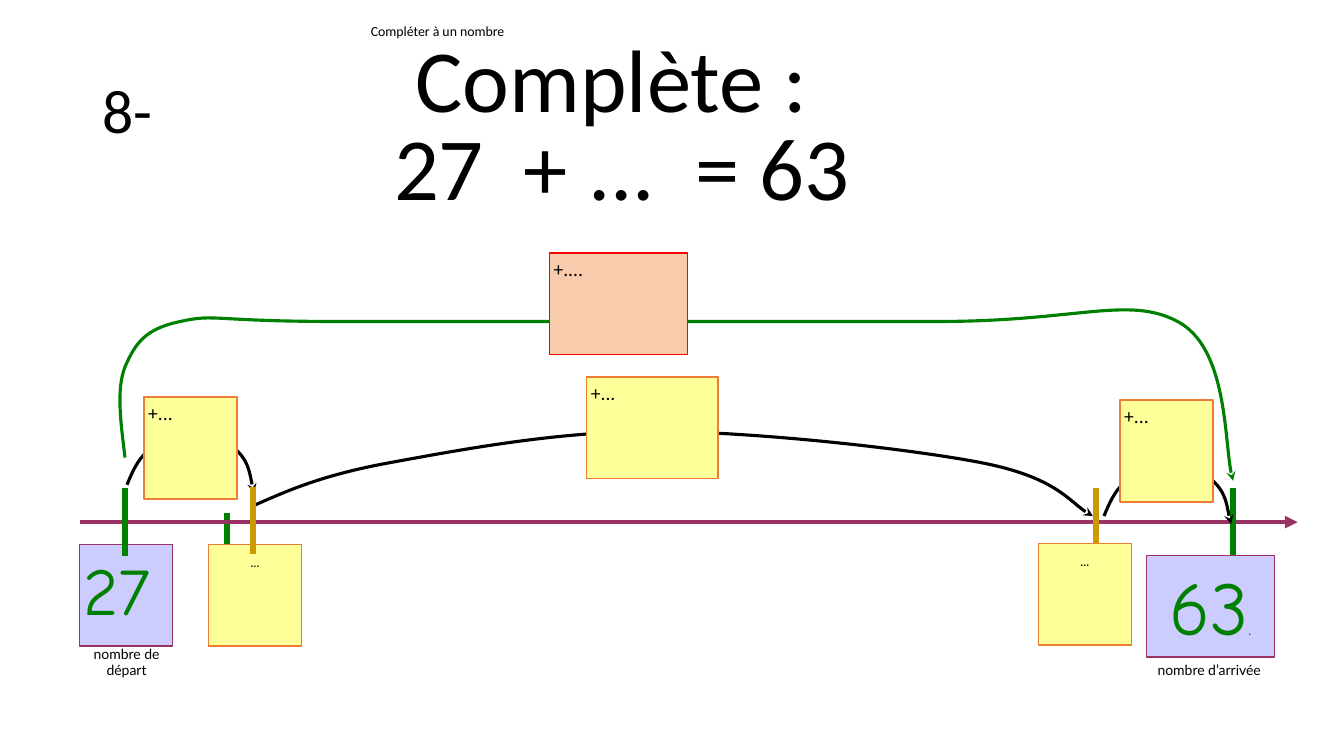
"""Build a number-line slide for completing 27 + ... = 63."""
from lxml import etree
from pptx import Presentation, util as u
from pptx.dml.color import RGBColor
from pptx.enum import shapes, text
from pptx.oxml.ns import qn

PX = 9144
BLACK, GREEN, PLUM, GOLD = "000000", "008000", "993366", "CC9900"
LILAC, YELLOW, ORANGE, PEACH, RED = "CCCCFF", "FFFF99", "ED7D31", "F8CBAD", "FF0000"
BOX_H, INSET, BOX_LINE = 101, 4, 1
LEFT, CENTER = text.PP_ALIGN.LEFT, text.PP_ALIGN.CENTER

NUMBER = [("8-", 44, LEFT)]
EXERCISE = [("Compléter à un nombre", 9.9, LEFT),
            ("Complète : ", 63.3, CENTER),
            ("27  + ...  = 63", 63.3, CENTER)]
LABELS = [((46, 636, 159, 107), [("nombre de", 10, CENTER), ("départ", 10, CENTER)]),
          ((1144, 652, 125, 124), [("nombre d’arrivée", 10, LEFT)])]

BACK_TICK = (225, 509, 225, 615, GREEN, 4.5)
AXIS = (79, 518, 1287, 518, PLUM, 3)
TICKS = [(x, 484, x, 552, color, 4.5)
         for x, color in ((124, GREEN), (1087, GOLD), (1223, GREEN))]
FRONT_TICK = (251, 483, 251, 550, GOLD, 4.5)

TOTAL_JUMP = [(124, 454), (120, 420), (115, 387), (124, 364), (134, 341), (144, 326),
              (179, 319), (214, 311), (210, 319), (335, 319), (460, 319), (791, 319),
              (930, 319), (1069, 319), (1119, 293), (1168, 319), (1217, 345),
              (1214, 450), (1223, 477)]
SMALL_JUMP = [(126, 481), (131, 469), (136, 457), (146, 448), (157, 438), (171, 423),
              (186, 423), (201, 423), (225, 436), (236, 448), (247, 459), (250, 482),
              (252, 489)]
BIG_JUMP = [(253, 501), (287, 486), (321, 471), (387, 459), (453, 447), (551, 428),
            (648, 428), (746, 428), (900, 445), (973, 459), (1045, 473), (1065, 503),
            (1084, 512)]
LAST_JUMP = [(x + 969, y + 31) for x, y in SMALL_JUMP]

START = (79, 540, 92, LILAC, PLUM, [("27", 48)], "Comic Neue", GREEN, LEFT)
END = (1137, 551, 127, LILAC, PLUM, [("63", 54), (".", 14)], "Comic Neue", GREEN, CENTER)
STEPS = [(x, y, 92, YELLOW, ORANGE, [("...", 14)], "Comic Neue", BLACK, CENTER)
         for x, y in ((207, 540), (1030, 539))]
GAPS = [(x, y, w, YELLOW, ORANGE, [("+...", 14)], "Calibri", BLACK, LEFT)
        for x, y, w in ((143, 394, 92), (582, 374, 130), (1111, 397, 92))]
TOTAL = (545, 251, 137, PEACH, RED, [("+....", 14)], "Calibri", BLACK, LEFT)


def rgb(color):
    return RGBColor.from_string(color)


def px(*values):
    return [v * PX for v in values]


def set_line(sp, color, width, head=None):
    sp.line.color.rgb = rgb(color)
    sp.line.width = u.Pt(width)
    if head:
        etree.SubElement(sp.line._get_or_add_ln(), qn("a:tailEnd"), type=head)


def set_margins(tf):
    tf.margin_left = tf.margin_right = tf.margin_top = tf.margin_bottom = INSET * PX


def set_font(font, name, color):
    font.name = name
    font.color.rgb = rgb(color)


def add_text(s, place, lines, name, spacing=None, before=0, inset=True):
    tf = s.shapes.add_textbox(*px(*place)).text_frame
    tf.word_wrap = True
    if inset:
        set_margins(tf)
    for i, (words, size, align) in enumerate(lines):
        p = tf.add_paragraph() if i else tf.paragraphs[0]
        p.text, p.alignment = words, align
        p.font.size = u.Pt(size)
        set_font(p.font, name, BLACK)
        if spacing:
            p.line_spacing = spacing
        if i:
            p.space_before = u.Pt(before)
    return tf


def add_line(s, x1, y1, x2, y2, color, width, head=None):
    sp = s.shapes.add_connector(shapes.MSO_CONNECTOR.STRAIGHT, *px(x1, y1, x2, y2))
    set_line(sp, color, width, head)
    etree.SubElement(sp._element.spPr, qn("a:effectLst"))


def add_jump(s, points, color):
    builder = s.shapes.build_freeform(*points[0], scale=PX)
    builder.add_line_segments(points[1:], close=False)
    sp = builder.convert_to_shape()
    sp.fill.background()
    set_line(sp, color, 2.25, "stealth")
    sp.shadow.inherit = False
    path = sp._element.spPr.find(".//" + qn("a:path"))
    segments = path.findall(qn("a:lnTo"))
    for i in range(0, len(segments), 3):
        curve = etree.SubElement(path, qn("a:cubicBezTo"))
        for segment in segments[i:i + 3]:
            curve.append(segment[0])
            path.remove(segment)


def add_box(s, x, y, w, fill, line, runs, name, color, align):
    sp = s.shapes.add_shape(shapes.MSO_SHAPE.RECTANGLE, *px(x, y, w, BOX_H))
    sp.shadow.inherit = False
    sp.fill.solid()
    sp.fill.fore_color.rgb = rgb(fill)
    set_line(sp, line, BOX_LINE)
    tf = sp.text_frame
    tf.word_wrap = True
    tf.vertical_anchor = text.MSO_ANCHOR.TOP
    set_margins(tf)
    p = tf.paragraphs[0]
    p.alignment = align
    for words, size in runs:
        r = p.add_run()
        r.text = words
        r.font.size = u.Pt(size)
        set_font(r.font, name, color)


def main():
    prs = Presentation()
    prs.slide_width, prs.slide_height = px(1333, 750)
    s = prs.slides.add_slide(prs.slide_layouts[6])

    tf = add_text(s, (92, 40, 1150, 145), NUMBER, "Calibri", 0.9, inset=False)
    tf.vertical_anchor = text.MSO_ANCHOR.MIDDLE
    add_text(s, (358, 22, 517, 211), EXERCISE, "Calibri", 0.7, 10, inset=False)

    add_line(s, *BACK_TICK)
    add_jump(s, TOTAL_JUMP, GREEN)
    add_line(s, *AXIS, head="triangle")
    add_box(s, *START)
    for tick in TICKS:
        add_line(s, *tick)
    for jump in (SMALL_JUMP, BIG_JUMP, LAST_JUMP):
        add_jump(s, jump, BLACK)
    for box in (END, *STEPS, *GAPS, TOTAL):
        add_box(s, *box)
    add_line(s, *FRONT_TICK)
    for place, lines in LABELS:
        add_text(s, place, lines, "Lato")

    prs.save("out.pptx")


if __name__ == "__main__":
    main()
